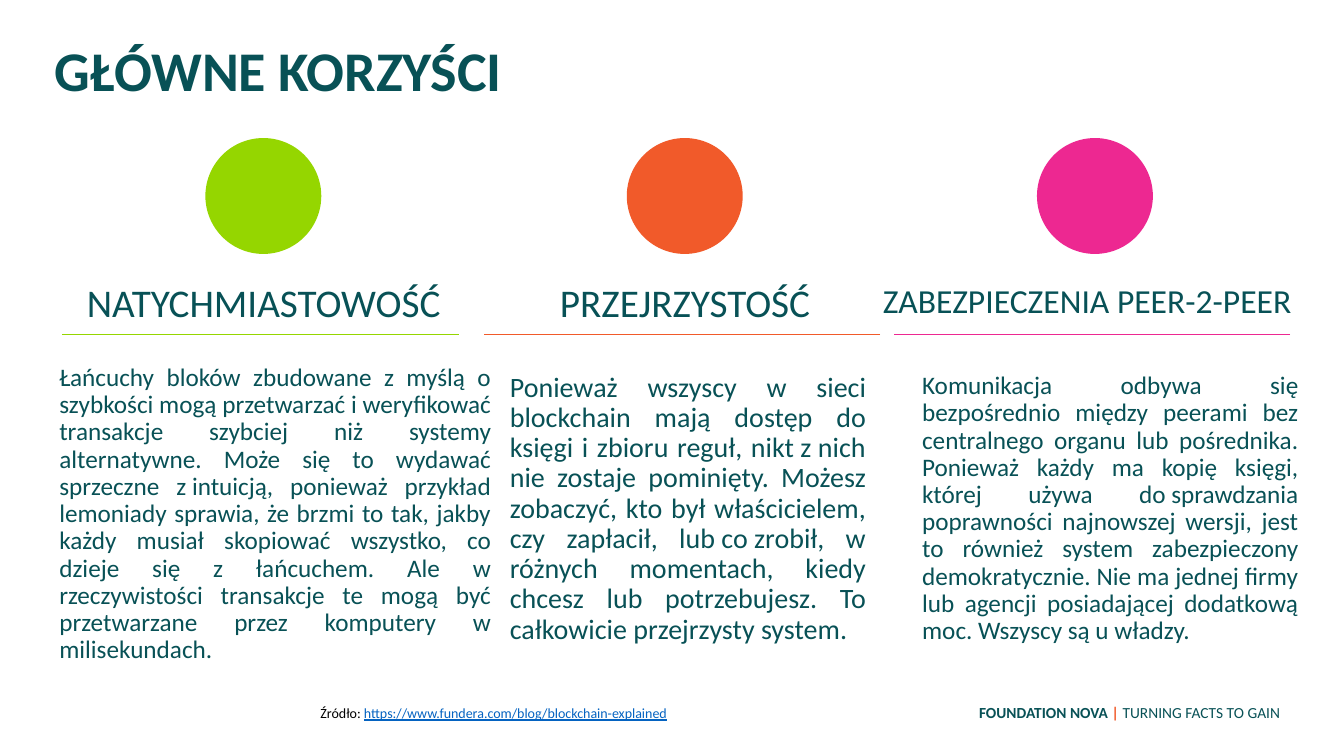
"""Build the slide on the main benefits of blockchain."""
from dataclasses import dataclass

import lxml.etree
import pptx
import pptx.dml.color
import pptx.enum.shapes
import pptx.enum.text
import pptx.oxml.ns
import pptx.util

Pt = pptx.util.Pt
RGBColor = pptx.dml.color.RGBColor
Align = pptx.enum.text.PP_ALIGN

TEAL = RGBColor(0x08, 0x51, 0x56)
GREEN = RGBColor(0x95, 0xD6, 0x00)
ORANGE = RGBColor(0xF1, 0x5A, 0x2A)
PINK = RGBColor(0xED, 0x28, 0x91)
BLACK = RGBColor(0, 0, 0)
LINK_BLUE = RGBColor(0x05, 0x63, 0xC1)

NBSP = chr(160)
RULE_Y, RULE_WIDTH = 239, 283
CIRCLE_TOP, CIRCLE_SIZE = 98.6, 82.8
CIRCLE_INDENT = (RULE_WIDTH - CIRCLE_SIZE) / 2 + 2


@dataclass(frozen=True)
class Box:
    left: float
    top: float
    width: float
    height: float


@dataclass(frozen=True)
class Benefit:
    color: RGBColor
    rule_left: float
    heading: str
    heading_box: Box
    heading_size: float
    heading_align: Align
    story: str
    story_box: Box
    story_size: float


BENEFITS = [
    Benefit(
        GREEN, 44.6, "NATYCHMIASTOWOŚĆ", Box(54, 198.7, 268.6, 82), 28, Align.CENTER,
        "Łańcuchy bloków zbudowane z myślą o szybkości mogą przetwarzać "
        f"i{NBSP}weryfikować transakcje szybciej niż systemy alternatywne. Może się to "
        f"wydawać sprzeczne z{NBSP}intuicją, ponieważ przykład lemoniady sprawia, że "
        "brzmi to tak, jakby każdy musiał skopiować wszystko, co dzieje się "
        "z łańcuchem. Ale w rzeczywistości transakcje te mogą być przetwarzane "
        "przez komputery w milisekundach.",
        Box(35.3, 257, 322.6, 212.4), 18,
    ),
    Benefit(
        ORANGE, 345.6, "PRZEJRZYSTOŚĆ", Box(355, 198.7, 268.6, 82), 28, Align.CENTER,
        "Ponieważ wszyscy w sieci blockchain mają dostęp do księgi i zbioru "
        f"reguł, nikt{NBSP}z{NBSP}nich nie zostaje pominięty. Możesz zobaczyć, kto był "
        f"właścicielem, czy zapłacił, lub{NBSP}co{NBSP}zrobił, w różnych momentach, kiedy "
        "chcesz lub potrzebujesz. To całkowicie przejrzysty system.",
        Box(357.1, 262.8, 268.6, 226.8), 20,
    ),
    Benefit(
        PINK, 638.6, "ZABEZPIECZENIA PEER-2-PEER", Box(623.5, 199.4, 330.5, 32.4), 24,
        Align.LEFT,
        "Komunikacja odbywa się bezpośrednio między peerami bez centralnego "
        "organu lub pośrednika. Ponieważ każdy ma kopię księgi, której używa "
        f"do{NBSP}sprawdzania poprawności najnowszej wersji, jest to również system "
        "zabezpieczony demokratycznie. Nie ma jednej firmy lub agencji "
        f"posiadającej dodatkową moc. Wszyscy{NBSP}są{NBSP}u{NBSP}władzy.",
        Box(651.6, 262.8, 283, 211.7), 18,
    ),
]


def place(shape, box: Box):
    """Position a text shape and return its top-anchored, wrapping frame."""
    shape.left, shape.top = Pt(box.left), Pt(box.top)
    shape.width, shape.height = Pt(box.width), Pt(box.height)
    frame = shape.text_frame
    frame.word_wrap = True
    frame.auto_size = pptx.enum.text.MSO_AUTO_SIZE.NONE
    frame.vertical_anchor = pptx.enum.text.MSO_ANCHOR.TOP
    return frame


def add_frame(slide, box: Box):
    """Add a text box and return its frame."""
    return place(slide.shapes.add_textbox(0, 0, 0, 0), box)


def write(frame, text: str, *, size: float, color: RGBColor = TEAL, bold: bool = False,
          underline: bool = False, align: Align = Align.LEFT, spacing: float = 1.0) -> None:
    """Append a formatted run to the frame's first paragraph."""
    paragraph = frame.paragraphs[0]
    paragraph.alignment = align
    paragraph.line_spacing = spacing
    paragraph.space_before = Pt(0)
    run = paragraph.add_run()
    run.text = text
    run.font.name = "Calibri"
    run.font.size = Pt(size)
    run.font.bold = bold
    run.font.underline = underline
    run.font.color.rgb = color


def draw_circle(slide, benefit: Benefit) -> None:
    """Draw the coloured circle above a benefit."""
    circle = slide.shapes.add_shape(
        pptx.enum.shapes.MSO_SHAPE.OVAL, Pt(benefit.rule_left + CIRCLE_INDENT),
        Pt(CIRCLE_TOP), Pt(CIRCLE_SIZE), Pt(CIRCLE_SIZE))
    circle.shadow.inherit = False
    circle.fill.solid()
    circle.fill.fore_color.rgb = benefit.color
    circle.line.fill.background()


def draw_rule(slide, benefit: Benefit) -> None:
    """Draw the coloured line under a benefit's heading."""
    rule = slide.shapes.add_connector(
        pptx.enum.shapes.MSO_CONNECTOR.STRAIGHT, Pt(benefit.rule_left + RULE_WIDTH),
        Pt(RULE_Y), Pt(benefit.rule_left), Pt(RULE_Y))
    rule.line.color.rgb = benefit.color
    rule.line.width = Pt(1)
    lxml.etree.SubElement(rule._element.spPr, pptx.oxml.ns.qn("a:effectLst"))


def draw_benefit(slide, benefit: Benefit) -> None:
    """Draw one column: circle, heading, line and story."""
    draw_circle(slide, benefit)
    write(add_frame(slide, benefit.heading_box), benefit.heading,
          size=benefit.heading_size, align=benefit.heading_align, spacing=0.9)
    draw_rule(slide, benefit)
    write(add_frame(slide, benefit.story_box), benefit.story,
          size=benefit.story_size, align=Align.JUSTIFY, spacing=0.9)


def main() -> None:
    """Build and save the slide."""
    deck = pptx.Presentation()
    deck.slide_width, deck.slide_height = Pt(960), Pt(540)
    slide = deck.slides.add_slide(deck.slide_layouts[5])

    title = place(slide.shapes.title, Box(31.7, 27.4, 900, 54.7))
    write(title, "GŁÓWNE KORZYŚCI", size=40, bold=True, spacing=0.9)

    for benefit in BENEFITS:
        draw_benefit(slide, benefit)

    source = add_frame(slide, Box(221.8, 499.7, 268.6, 19.4))
    write(source, "Źródło: ", size=10, color=BLACK)
    write(source, "https://www.fundera.com/blog/blockchain-explained",
          size=10, color=LINK_BLUE, underline=True)

    footer = add_frame(slide, Box(51.8, 499, 869.8, 32.4))
    write(footer, "FOUNDATION NOVA ", size=11, bold=True, align=Align.RIGHT)
    write(footer, "| ", size=11, color=ORANGE, bold=True, align=Align.RIGHT)
    write(footer, "TURNING FACTS TO GAIN", size=11, align=Align.RIGHT)

    deck.save("out.pptx")


if __name__ == "__main__":
    main()
